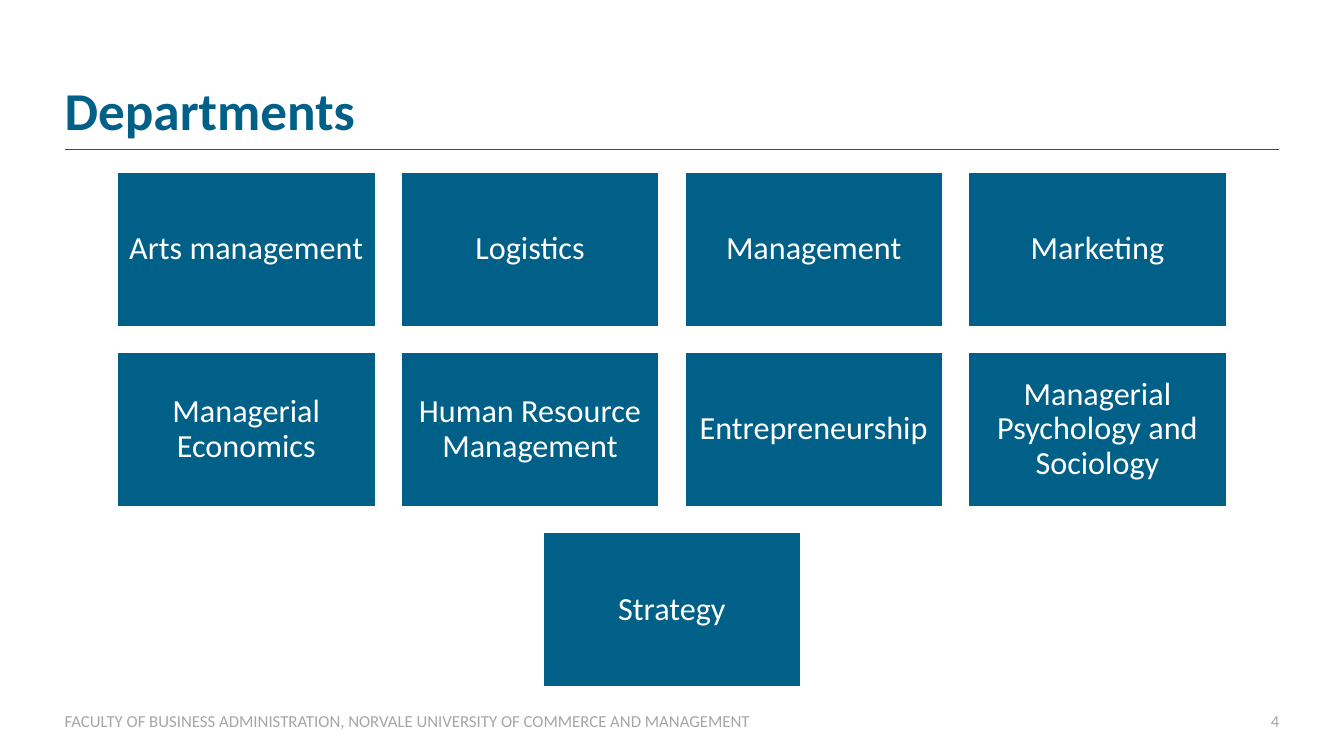
from lxml.etree import SubElement
from pptx import Presentation
from pptx.dml.color import RGBColor
from pptx.enum.shapes import MSO_CONNECTOR, MSO_SHAPE
from pptx.enum.text import MSO_ANCHOR, PP_ALIGN
from pptx.oxml.ns import qn
from pptx.util import Cm, Pt

BLUE = RGBColor(0x00, 0x60, 0x88)
GREY = RGBColor(0xA6, 0xA6, 0xA6)
WHITE = RGBColor(0xFF, 0xFF, 0xFF)

LEFT, WIDTH = 1.63, 30.61
UNITS = [
    ["Arts management", "Logistics", "Management", "Marketing"],
    ["Managerial Economics", "Human Resource Management",
     "Entrepreneurship", "Managerial Psychology and Sociology"],
    ["Strategy"],
]


def write(shape, text, size, color, align=PP_ALIGN.LEFT,
          anchor=MSO_ANCHOR.MIDDLE, inset=0, bold=False, spacing=1.0):
    frame = shape.text_frame
    frame.word_wrap = True
    frame.vertical_anchor = anchor
    frame.margin_left = frame.margin_right = Cm(inset)
    frame.margin_top = frame.margin_bottom = Cm(inset)
    frame.text = text
    para = frame.paragraphs[0]
    para.alignment = align
    para.line_spacing = spacing
    font = para.font
    font.name, font.size, font.bold = "Calibri", Pt(size), bold
    font.color.rgb = color


def add_head(slide, x, y, w, h):
    """Title with a thin rule along the bottom of the box."""
    title = slide.shapes.title
    title.left, title.top = Cm(x), Cm(y)
    title.width, title.height = Cm(w), Cm(h - 0.18)
    write(title, "Departments", 38, BLUE, anchor=MSO_ANCHOR.BOTTOM,
          bold=True, spacing=0.9)
    rule = slide.shapes.add_connector(
        MSO_CONNECTOR.STRAIGHT, Cm(x), Cm(y + h), Cm(x + w), Cm(y + h))
    rule.line.color.rgb = BLUE
    rule.line.width = Pt(0.25)
    SubElement(rule._element.spPr, qn("a:effectLst"))


def add_grid(slide, x, y, w, block_w=6.5, block_h=3.89, gap=0.65):
    """Rows of blocks, each row centred across the box."""
    for i, row in enumerate(UNITS):
        row_w = len(row) * (block_w + gap) - gap
        start = x + (w - row_w) / 2
        for j, name in enumerate(row):
            block = slide.shapes.add_shape(
                MSO_SHAPE.RECTANGLE,
                Cm(start + j * (block_w + gap)), Cm(y + i * (block_h + gap)),
                Cm(block_w), Cm(block_h))
            block.shadow.inherit = False
            block.fill.solid()
            block.fill.fore_color.rgb = BLUE
            block.line.color.rgb = WHITE
            block.line.width = Pt(1)
            write(block, name, 23, WHITE, PP_ALIGN.CENTER,
                  inset=0.25, spacing=0.9)


def add_foot(slide, x, y, w, h):
    num_w = 1.3
    note = slide.shapes.add_textbox(Cm(x), Cm(y), Cm(25.8), Cm(h))
    write(note, "FACULTY OF BUSINESS ADMINISTRATION, "
          "NORVALE UNIVERSITY OF COMMERCE AND MANAGEMENT", 12, GREY)
    num = slide.shapes.add_textbox(Cm(x + w - num_w), Cm(y), Cm(num_w), Cm(h))
    write(num, "4", 12, GREY, PP_ALIGN.RIGHT)


def main():
    deck = Presentation()
    deck.slide_width, deck.slide_height = Cm(33.87), Cm(19.05)
    slide = deck.slides.add_slide(deck.slide_layouts[5])
    add_head(slide, LEFT, 2.11, WIDTH, 1.65)
    add_grid(slide, LEFT, 4.34, WIDTH)
    add_foot(slide, LEFT, 17.91, WIDTH, 0.51)
    deck.save("out.pptx")


if __name__ == "__main__":
    main()
